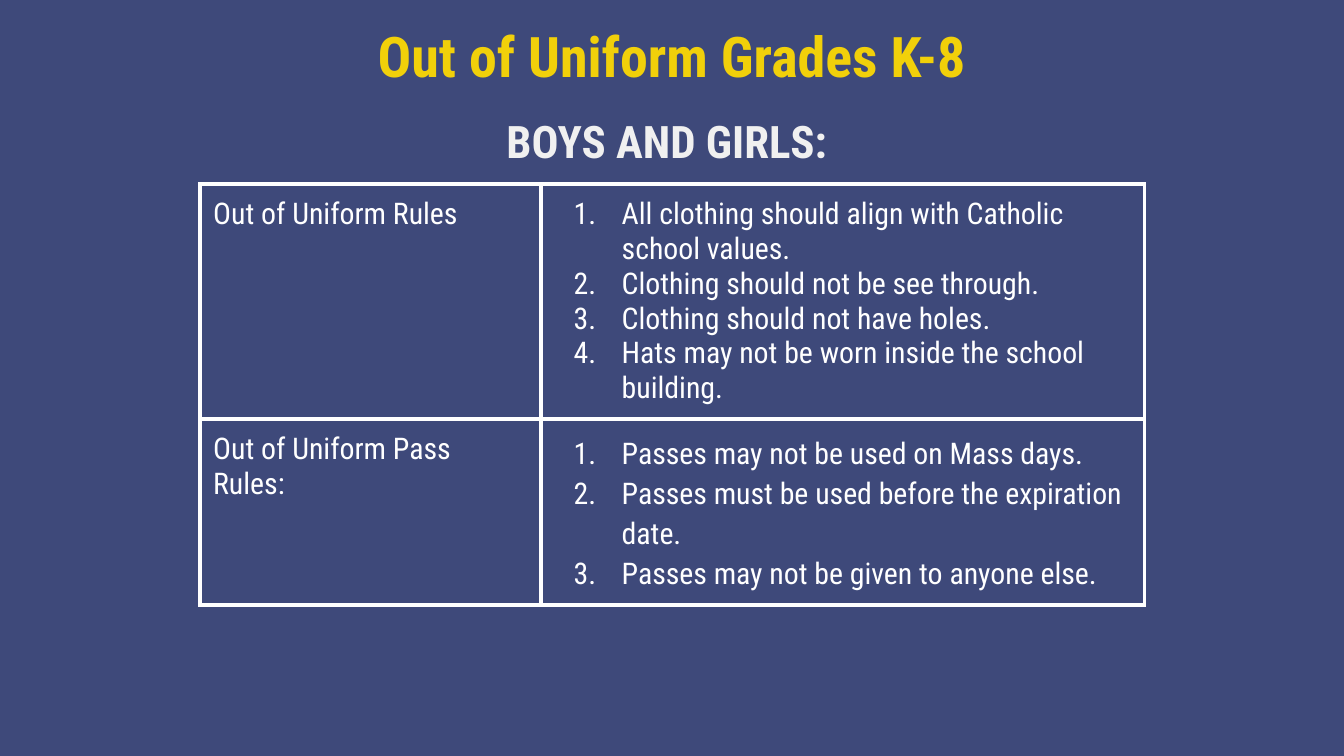
import pptx
import pptx.dml.color
import pptx.enum.text
import pptx.oxml.ns
import pptx.util
from lxml import etree

Cm = pptx.util.Cm
Pt = pptx.util.Pt
qn = pptx.oxml.ns.qn

FONT = "Roboto Condensed"
COLORS = {
    "background": "3E497A",
    "title": "F1D00A",
    "subtitle": "F0F0F0",
    "table": "FFFFFF",
}
INSET = Cm(0.25)

# Each row: heading, numbered rules, line spacing of the rules
RULES = [
    ("Out of Uniform Rules", [
        "All clothing should align with Catholic school values.",
        "Clothing should not be see through.",
        "Clothing should not have holes.",
        "Hats may not be worn inside the school building.",
    ], 1.0),
    ("Out of Uniform Pass Rules:", [
        "Passes may not be used on Mass days.",
        "Passes must be used before the expiration date.",
        "Passes may not be given to anyone else.",
    ], 1.15),
]


def color(name):
    return pptx.dml.color.RGBColor.from_string(COLORS[name])


def style_paragraph(para, size, color_name, bold=False):
    para.font.name = FONT
    para.font.size = Pt(size)
    para.font.bold = bold
    para.font.color.rgb = color(color_name)


def fill_heading(box, text, top, height, size, color_name, spacing):
    """Place a full-width centred heading."""
    box.left, box.top, box.width, box.height = Cm(0), top, Cm(25.4), height
    frame = box.text_frame
    frame.word_wrap = True
    frame.auto_size = pptx.enum.text.MSO_AUTO_SIZE.NONE
    frame.vertical_anchor = pptx.enum.text.MSO_ANCHOR.TOP
    frame.margin_left = frame.margin_right = INSET
    frame.margin_top = frame.margin_bottom = INSET
    para = frame.paragraphs[0]
    para.text = text
    para.alignment = pptx.enum.text.PP_ALIGN.CENTER
    para.line_spacing = spacing
    style_paragraph(para, size, color_name, bold=True)


def number_paragraph(para):
    """Add automatic numbering with a hanging indent."""
    properties = para._p.get_or_add_pPr()
    properties.set("marL", str(Cm(1.27)))
    properties.set("indent", str(Cm(-0.91)))
    bullet_color = etree.SubElement(properties, qn("a:buClr"))
    etree.SubElement(bullet_color, qn("a:srgbClr"), val=COLORS["table"])
    etree.SubElement(properties, qn("a:buFont"), typeface=FONT)
    etree.SubElement(properties, qn("a:buAutoNum"), type="arabicPeriod")


def format_cell(cell):
    """Give a cell its borders, clear fill and margins."""
    properties = cell._tc.get_or_add_tcPr()
    for side in ("lnL", "lnR", "lnT", "lnB"):
        line = etree.SubElement(properties, qn(f"a:{side}"), w=str(Pt(2.25)))
        fill = etree.SubElement(line, qn("a:solidFill"))
        etree.SubElement(fill, qn("a:srgbClr"), val=COLORS["table"])
    cell.fill.background()
    cell.margin_left = cell.margin_right = INSET
    cell.margin_top = cell.margin_bottom = INSET


def write_cell(cell, texts, numbered=False, spacing=1.0):
    format_cell(cell)
    frame = cell.text_frame
    for index, text in enumerate(texts):
        para = frame.add_paragraph() if index else frame.paragraphs[0]
        para.text = text
        if numbered:
            number_paragraph(para)
        para.line_spacing = spacing
        style_paragraph(para, 16, "table")


def add_rules_table(page):
    widths, heights = (Cm(6.45), Cm(11.4)), (Cm(4.27), Cm(3.02))
    table = page.shapes.add_table(
        len(RULES), 2, Cm(3.78), Cm(3.48), sum(widths), sum(heights)).table
    table.first_row = table.horz_banding = False
    for column, width in zip(table.columns, widths):
        column.width = width
    for index, (heading, rules, spacing) in enumerate(RULES):
        table.rows[index].height = heights[index]
        write_cell(table.cell(index, 0), [heading])
        write_cell(table.cell(index, 1), rules, True, spacing)


def main():
    deck = pptx.Presentation()
    deck.slide_width, deck.slide_height = Cm(25.4), Cm(14.29)
    page = deck.slides.add_slide(deck.slide_layouts[5])
    page.background.fill.solid()
    page.background.fill.fore_color.rgb = color("background")

    # Headings
    fill_heading(page.shapes.title, "Out of Uniform Grades K-8",
                 Cm(0.15), Cm(1.6), 30, "title", 1.0)
    subtitle = page.shapes.add_textbox(0, 0, 0, 0)
    fill_heading(subtitle, "BOYS AND GIRLS: ",
                 Cm(1.75), Cm(1.42), 24, "subtitle", 1.15)

    # Rules
    add_rules_table(page)
    deck.save("out.pptx")


if __name__ == "__main__":
    main()
